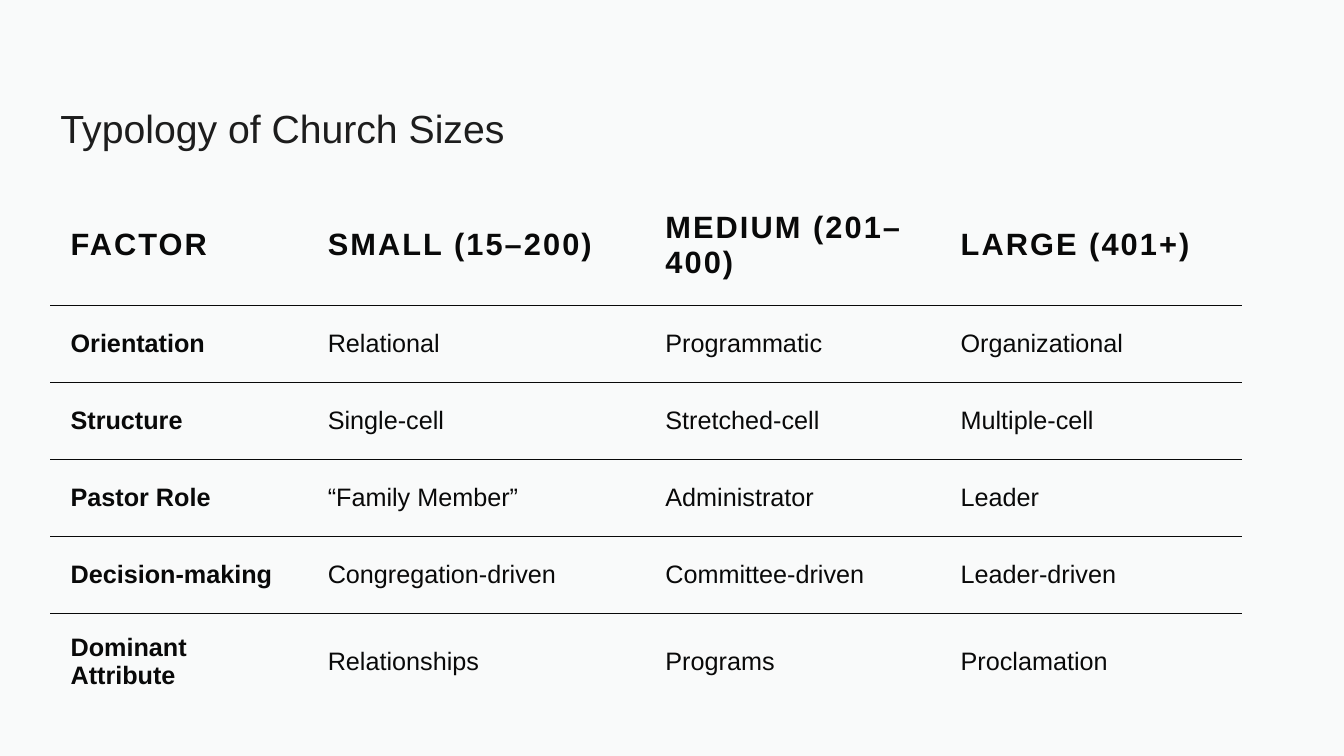
from dataclasses import dataclass

from lxml import etree
from pptx import Presentation
from pptx.dml.color import RGBColor
from pptx.enum.text import MSO_ANCHOR, PP_ALIGN
from pptx.oxml.ns import qn
from pptx.util import Cm, Pt

ANCHOR_BOTTOM = MSO_ANCHOR.BOTTOM
ANCHOR_MIDDLE = MSO_ANCHOR.MIDDLE
ALIGN_LEFT = PP_ALIGN.LEFT
TITLE_ONLY = 5

LEFT, WIDTH = 1.27, 30.02
COLUMN_WIDTHS = (6.48, 8.51, 7.44, 7.59)
HEADER_HEIGHT, ROW_HEIGHT = 3.02, 1.94
CELL_MARGIN = 0.51

CHURCH_SIZES = (
    ("FACTOR", "SMALL (15–200)", "MEDIUM (201–400)", "LARGE (401+)"),
    ("Orientation", "Relational", "Programmatic", "Organizational"),
    ("Structure", "Single-cell", "Stretched-cell", "Multiple-cell"),
    ("Pastor Role", "“Family Member”", "Administrator", "Leader"),
    ("Decision-making", "Congregation-driven", "Committee-driven", "Leader-driven"),
    ("Dominant Attribute", "Relationships", "Programs", "Proclamation"),
)


@dataclass(frozen=True)
class Theme:
    font: str = "Arial"
    background: RGBColor = RGBColor(0xF9, 0xFA, 0xFA)
    title_color: RGBColor = RGBColor(0x1D, 0x1D, 0x1D)
    table_color: RGBColor = RGBColor(0x09, 0x09, 0x09)
    title_size: int = 28
    header_size: int = 22
    body_size: int = 18
    header_spacing: float = 1.5
    rule_width: float = 0.5


def set_attributes(target, values):
    for name, value in values.items():
        setattr(target, name, value)


class SlideBuilder:
    def __init__(self, presentation, theme):
        self.theme = theme
        self.slide = presentation.slides.add_slide(presentation.slide_layouts[TITLE_ONLY])
        fill = self.slide.background.fill
        fill.solid()
        fill.fore_color.rgb = theme.background

    def add_text(self, paragraph, text, size, color, bold=False, spacing=0):
        paragraph.alignment = ALIGN_LEFT
        run = paragraph.add_run()
        run.text = text
        set_attributes(run.font, {"name": self.theme.font, "size": Pt(size), "bold": bold})
        run.font.color.rgb = color
        if spacing:
            run._r.get_or_add_rPr().set("spc", str(round(spacing * 100)))

    def title(self, text, left, top, width, height):
        shape = self.slide.shapes.title
        set_attributes(shape, {"left": Cm(left), "top": Cm(top),
                               "width": Cm(width), "height": Cm(height)})
        set_attributes(shape.text_frame, {"vertical_anchor": ANCHOR_BOTTOM, "word_wrap": True})
        paragraph = shape.text_frame.paragraphs[0]
        paragraph.line_spacing = 0.9
        self.add_text(paragraph, text, self.theme.title_size, self.theme.title_color)

    def border(self, cell, side, visible):
        line = etree.SubElement(cell._tc.get_or_add_tcPr(), qn(f"a:ln{side}"),
                                w=str(Pt(self.theme.rule_width)))
        if visible:
            fill = etree.SubElement(line, qn("a:solidFill"))
            etree.SubElement(fill, qn("a:srgbClr"), val=str(self.theme.table_color))
        else:
            etree.SubElement(line, qn("a:noFill"))

    def table(self, rows, left, top):
        """Draw a table with rules only between its rows."""
        heights = [HEADER_HEIGHT] + [ROW_HEIGHT] * (len(rows) - 1)
        table = self.slide.shapes.add_table(
            len(rows), len(COLUMN_WIDTHS), Cm(left), Cm(top),
            Cm(sum(COLUMN_WIDTHS)), Cm(sum(heights))).table
        table.horz_banding = False
        for column, width in zip(table.columns, COLUMN_WIDTHS):
            column.width = Cm(width)
        for row, height in zip(table.rows, heights):
            row.height = Cm(height)
        for row_index, texts in enumerate(rows):
            is_header = row_index == 0
            is_last = row_index == len(rows) - 1
            for column_index, text in enumerate(texts):
                cell = table.cell(row_index, column_index)
                set_attributes(cell, {f"margin_{side}": Cm(CELL_MARGIN)
                                      for side in ("left", "right", "top", "bottom")})
                cell.vertical_anchor = ANCHOR_MIDDLE
                for side, visible in (("L", False), ("R", False),
                                      ("T", not is_header), ("B", not is_last)):
                    self.border(cell, side, visible)
                cell.fill.background()
                self.add_text(cell.text_frame.paragraphs[0], text,
                              self.theme.header_size if is_header else self.theme.body_size,
                              self.theme.table_color,
                              bold=is_header or column_index == 0,
                              spacing=self.theme.header_spacing if is_header else 0)


def main():
    presentation = Presentation()
    set_attributes(presentation, {"slide_width": Cm(33.87), "slide_height": Cm(19.05)})
    builder = SlideBuilder(presentation, Theme())
    builder.title("Typology of Church Sizes", LEFT, 1.27, WIDTH, 2.69)
    builder.table(CHURCH_SIZES, LEFT, 4.67)
    presentation.save("out.pptx")


if __name__ == "__main__":
    main()
